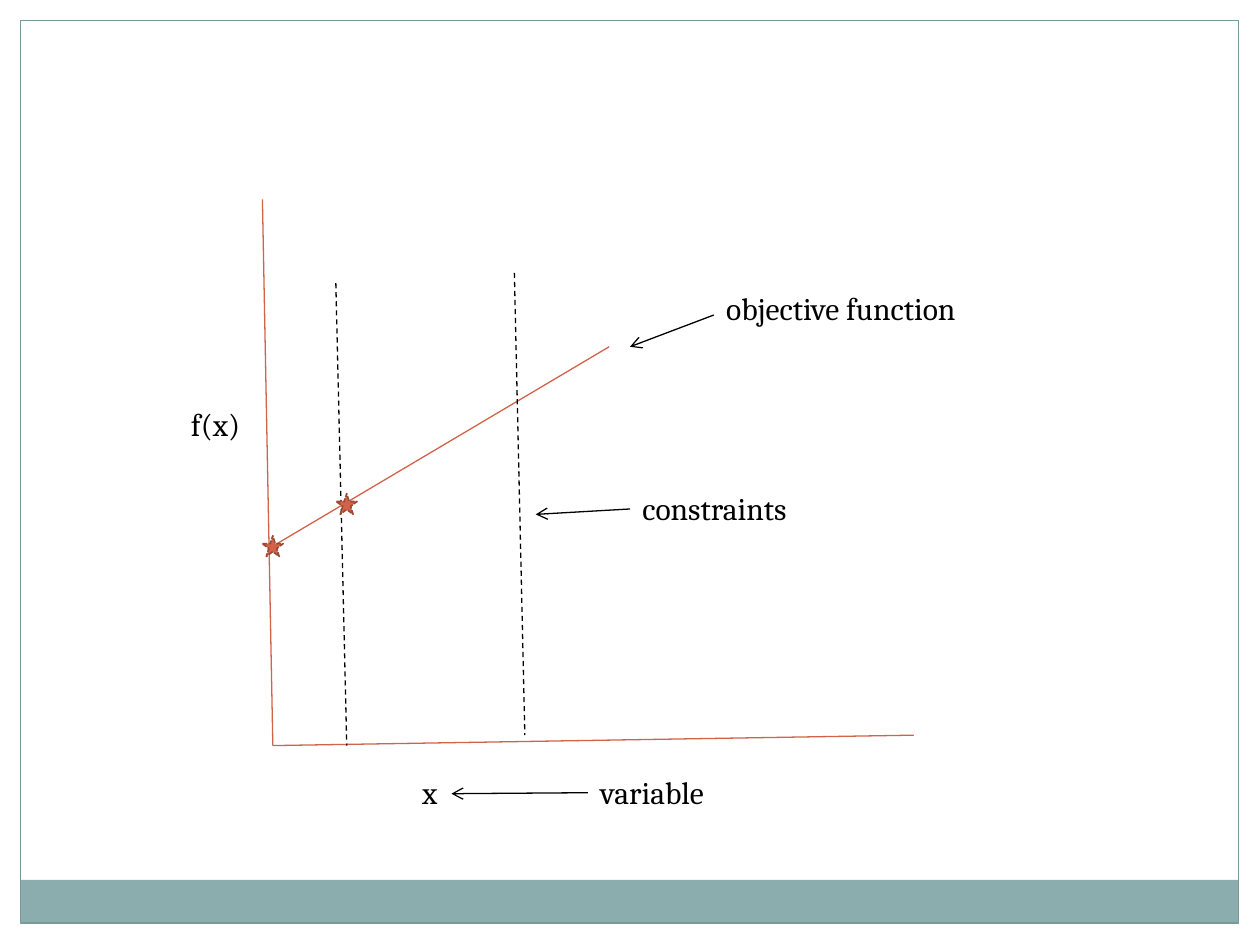
import pptx
import pptx.util
from pptx.dml.color import RGBColor
from pptx.enum.dml import MSO_LINE
from pptx.enum.shapes import MSO_CONNECTOR, MSO_SHAPE
from pptx.enum.text import MSO_AUTO_SIZE
from pptx.oxml.ns import qn
from lxml import etree

Cm, Pt = pptx.util.Cm, pptx.util.Pt

COLORS = {
    "band": "8CADAE",
    "frame": "7C999A",
    "graph": "D16349",
    "star_edge": "9B4936",
    "ink": "000000",
}
FONT = "Cambria"
LABEL_HEIGHT = 1.02
STAR_SIZE = 0.42


def rgb(name):
    return RGBColor.from_string(COLORS[name])


def add_preset(slide, preset, left, top, width, height, fill=None, edge=None, edge_width=0.75):
    shape = slide.shapes.add_shape(preset, Cm(left), Cm(top), Cm(width), Cm(height))
    shape.shadow.inherit = False
    if fill:
        shape.fill.solid()
        shape.fill.fore_color.rgb = rgb(fill)
    else:
        shape.fill.background()
    if edge:
        shape.line.color.rgb = rgb(edge)
        shape.line.width = Pt(edge_width)
    else:
        shape.line.fill.background()
    return shape


def add_line(slide, box, start, end, color, dash=None, arrow=False):
    """Draw a line between two points given relative to the box."""
    left, top = box
    line = slide.shapes.add_connector(
        MSO_CONNECTOR.STRAIGHT,
        Cm(left + start[0]), Cm(top + start[1]),
        Cm(left + end[0]), Cm(top + end[1]),
    )
    line.line.color.rgb = rgb(color)
    line.line.width = Pt(0.75)
    if dash:
        line.line.dash_style = dash
    if arrow:
        etree.SubElement(line.line._get_or_add_ln(), qn("a:tailEnd"), type="arrow")
    etree.SubElement(line._element.spPr, qn("a:effectLst"))


def add_label(slide, box, words, x, y, width):
    label = slide.shapes.add_textbox(
        Cm(box[0] + x), Cm(box[1] + y), Cm(width), Cm(LABEL_HEIGHT))
    frame = label.text_frame
    frame.word_wrap = False
    frame.auto_size = MSO_AUTO_SIZE.SHAPE_TO_FIT_TEXT
    run = frame.paragraphs[0].add_run()
    run.text = words
    run.font.name = FONT
    run.font.size = Pt(18)
    run.font.color.rgb = rgb("ink")


def add_page_frame(slide, left, top, width, height):
    band_height = 0.87
    add_preset(slide, MSO_SHAPE.RECTANGLE, left, top + height - band_height,
               width, band_height, fill="band")
    add_preset(slide, MSO_SHAPE.RECTANGLE, left, top, width, height, edge="frame")


def add_graph(slide, box):
    """Axes, objective function, constraints and optimum stars."""
    origin = (1.9, 11.01)
    intercept = (1.9, 6.99)
    for start, end in [
        ((1.69, 0), origin),
        (origin, (14.82, 10.8)),
        (intercept, (8.68, 2.97)),
    ]:
        add_line(slide, box, start, end, "graph")

    for start, end in [((3.17, 1.69), (3.39, 11.01)), ((6.77, 1.48), (6.98, 10.8))]:
        add_line(slide, box, start, end, "ink", dash=MSO_LINE.DASH)

    for x, y in [intercept, (3.39, 6.14)]:
        star = add_preset(slide, MSO_SHAPE.STAR_5_POINT,
                          box[0] + x - STAR_SIZE / 2, box[1] + y - STAR_SIZE / 2,
                          STAR_SIZE, STAR_SIZE, "graph", "star_edge", 0.9)
        star.line.dash_style = MSO_LINE.SQUARE_DOT


def add_annotations(slide, box):
    for words, x, y, width in [
        ("f(x)", 0, 4.02, 1.52),
        ("x", 4.66, 11.43, 0.84),
        ("objective function", 10.79, 1.69, 5.59),
        ("constraints", 9.1, 5.72, 3.68),
        ("variable", 8.25, 11.43, 2.79),
    ]:
        add_label(slide, box, words, x, y, width)

    for start, end in [
        ((10.79, 2.33), (9.1, 2.97)),
        ((9.1, 6.24), (7.2, 6.35)),
        ((8.25, 11.96), (5.5, 11.98)),
    ]:
        add_line(slide, box, start, end, "ink", arrow=True)


def main():
    deck = pptx.Presentation()
    deck.slide_width, deck.slide_height = Cm(25.4), Cm(19.05)
    slide = deck.slides.add_slide(deck.slide_layouts[6])
    diagram = (3.6, 4.02)
    add_page_frame(slide, 0.42, 0.42, 24.55, 18.19)
    add_graph(slide, diagram)
    add_annotations(slide, diagram)
    deck.save("out.pptx")


if __name__ == "__main__":
    main()
